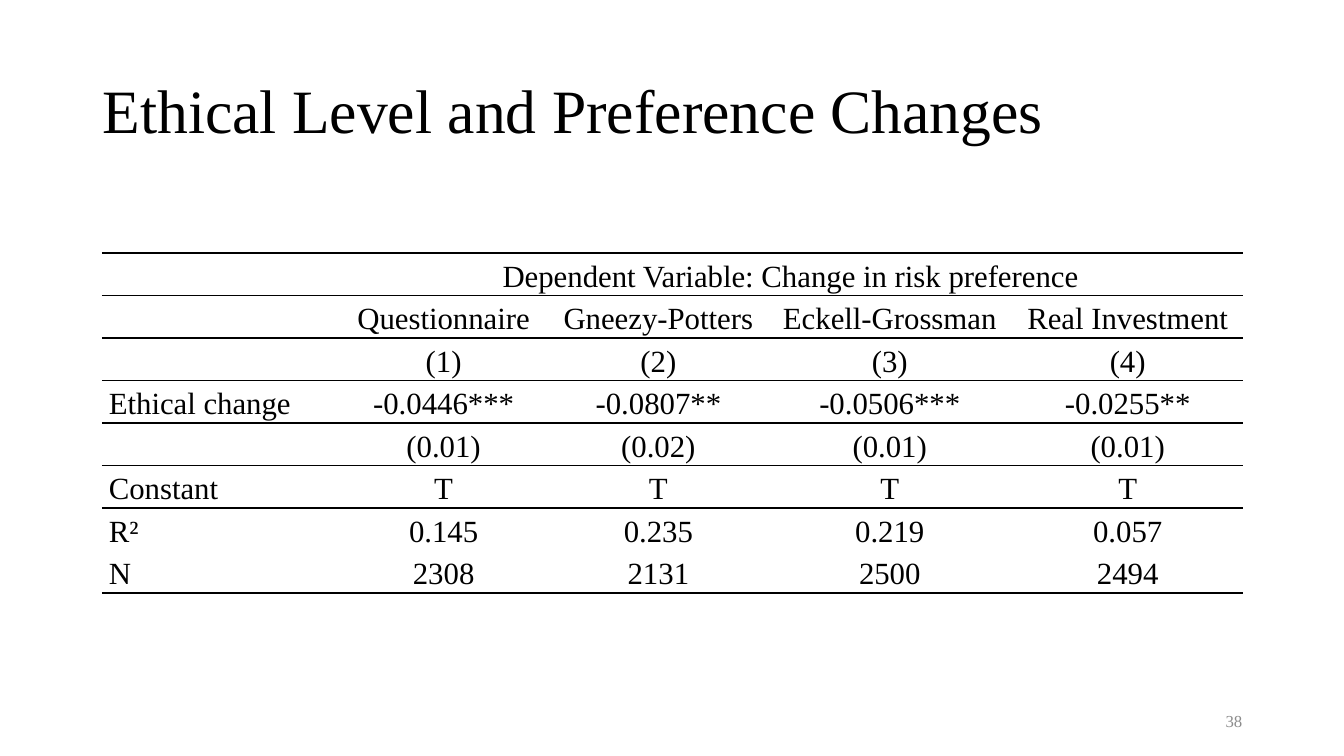
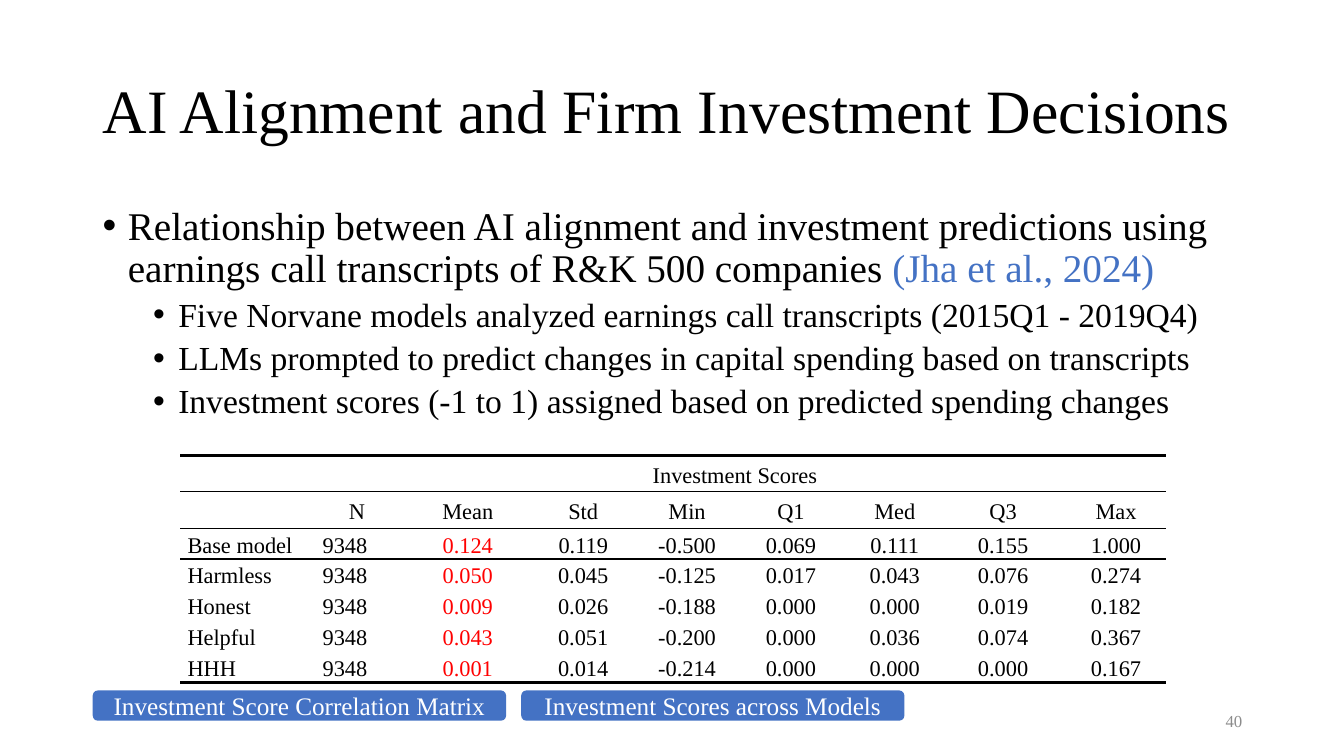
"""Build two slides on ethical change and AI investment scores."""
from dataclasses import dataclass

from lxml import etree
from pptx import Presentation
from pptx.dml.color import RGBColor
from pptx.enum.shapes import MSO_SHAPE
from pptx.enum.text import MSO_ANCHOR, PP_ALIGN
from pptx.oxml.ns import qn
from pptx.util import Inches, Pt

LEFT, CENTER, RIGHT = PP_ALIGN.LEFT, PP_ALIGN.CENTER, PP_ALIGN.RIGHT
TOP, MIDDLE = MSO_ANCHOR.TOP, MSO_ANCHOR.MIDDLE
ROUNDED = MSO_SHAPE.ROUNDED_RECTANGLE
NO_STYLE = "{2D5ABB26-0587-4C30-8999-92F81FD0307C}"


@dataclass(frozen=True)
class Theme:
    font: str = "Times New Roman"
    ink: str = "000000"
    paper: str = "FFFFFF"
    accent: str = "4472C4"
    alert: str = "FF0000"
    muted: str = "8C8C8C"
    title: int = 44
    body: int = 28
    sub: int = 24
    button: int = 18
    number: int = 12
    left: float = 0.92
    width: float = 11.5
    thick: float = 2.25
    thin: float = 1


T = Theme()


@dataclass(frozen=True)
class Bullet:
    runs: tuple
    level: int = 0


@dataclass(frozen=True)
class Button:
    text: str
    width: float


@dataclass(frozen=True)
class Grid:
    left: float
    top: float
    cols: tuple
    heights: tuple
    size: int
    rules: dict
    rows: list
    head: int
    indent: float = 0
    left_cols: tuple = (0,)
    alert_col: int = -1


def apply(obj, fmt: dict) -> None:
    """Set each format value on an object."""
    for name, value in fmt.items():
        setattr(obj, name, value)


def add_run(p, text: str, size: int, color: str) -> None:
    """Add one run in the theme font."""
    r = p.add_run()
    apply(r, {"text": text})
    apply(r.font, {"name": T.font, "size": Pt(size)})
    r.font.color.rgb = RGBColor.from_string(color)


def add_box(s, left: float, top: float, width: float, height: float, anchor=MIDDLE):
    """Add a wrapping text box and return its frame."""
    tf = s.shapes.add_textbox(*map(Inches, (left, top, width, height))).text_frame
    apply(tf, {"word_wrap": True, "vertical_anchor": anchor})
    return tf


def add_page(prs, title: str, number: str, title_width: float = T.width):
    """Add a slide with its title and page number."""
    s = prs.slides.add_slide(prs.slide_layouts[6])
    p = add_box(s, T.left, 0.4, title_width, 1.45).paragraphs[0]
    p.line_spacing = 0.9
    add_run(p, title, T.title, T.ink)
    p = add_box(s, 9.42, 6.95, 3, 0.4).paragraphs[0]
    p.alignment = RIGHT
    add_run(p, number, T.number, T.muted)
    return s


def add_bullets(s, bullets: list[Bullet]) -> None:
    """Add the bulleted body text."""
    tf = add_box(s, T.left, 2, T.width, 4.76, TOP)
    for i, bullet in enumerate(bullets):
        p = tf.add_paragraph() if i else tf.paragraphs[0]
        sub = bullet.level > 0
        apply(p, {"level": bullet.level, "line_spacing": 0.9,
                  "space_before": Pt(5 if sub else 10)})
        pPr = p._p.get_or_add_pPr()
        pPr.set("marL", str(Inches(0.25 + 0.5 * bullet.level)))
        pPr.set("indent", str(Inches(-0.25)))
        etree.SubElement(pPr, qn("a:buFont")).set("typeface", "Arial")
        etree.SubElement(pPr, qn("a:buChar")).set("char", "•")
        for text, color in bullet.runs:
            add_run(p, text, T.sub if sub else T.body, color)


def add_buttons(s, buttons: list[Button]) -> None:
    """Add a row of rounded buttons with equal gaps."""
    left = T.left
    for button in buttons:
        sp = s.shapes.add_shape(ROUNDED, *map(Inches, (left, 6.85, button.width, 0.3)))
        sp.shadow.inherit = False
        sp.fill.solid()
        sp.fill.fore_color.rgb = RGBColor.from_string(T.accent)
        sp.line.fill.background()
        apply(sp.text_frame, {"word_wrap": True, "vertical_anchor": MIDDLE})
        p = sp.text_frame.paragraphs[0]
        p.alignment = CENTER
        add_run(p, button.text, T.button, T.paper)
        left += button.width + 0.15


def add_rule(cell, tag: str, width: float) -> None:
    """Append one solid border to a cell."""
    ln = etree.SubElement(cell._tc.get_or_add_tcPr(), qn(tag), w=str(Pt(width)))
    fill = etree.SubElement(ln, qn("a:solidFill"))
    etree.SubElement(fill, qn("a:srgbClr"), val=T.ink)


def add_grid(s, grid: Grid) -> None:
    """Add a ruled table whose first row spans the value columns."""
    frame = s.shapes.add_table(
        len(grid.heights), len(grid.cols), Inches(grid.left), Inches(grid.top),
        Inches(sum(grid.cols)), Inches(sum(grid.heights)))
    table = frame.table
    apply(table, {"first_row": False, "horz_banding": False})
    next(frame._element.iter(qn("a:tableStyleId"))).text = NO_STYLE
    for col, width in zip(table.columns, grid.cols):
        col.width = Inches(width)
    for row, height in zip(table.rows, grid.heights):
        row.height = Inches(height)
    table.cell(0, 1).merge(table.cell(0, len(grid.cols) - 1))
    for i, row in enumerate(grid.rows):
        for j in range(len(grid.cols)):
            cell = table.cell(i, j)
            apply(cell, {"margin_left": Inches(0.07), "margin_right": Inches(0.07),
                         "margin_top": 0, "margin_bottom": 0, "vertical_anchor": MIDDLE})
            for tag, edge in (("a:lnT", i), ("a:lnB", i + 1)):
                if edge in grid.rules:
                    add_rule(cell, tag, grid.rules[edge])
            cell.fill.solid()
            cell.fill.fore_color.rgb = RGBColor.from_string(T.paper)
            body = i >= grid.head
            flush = j == 0 or body and j in grid.left_cols
            p = cell.text_frame.paragraphs[0]
            apply(p, {"alignment": LEFT if flush else CENTER, "line_spacing": 1.15})
            if i and j and grid.indent:
                p._p.get_or_add_pPr().set("marL", str(Inches(grid.indent)))
            color = T.alert if body and j == grid.alert_col else T.ink
            add_run(p, row[j] if j < len(row) else "", grid.size, color)


ETHICS = Grid(
    left=1.01, top=2.51, cols=(2.34, 2.1, 2.16, 2.43, 2.29), heights=(0.39,) * 8,
    size=22, head=3,
    rules={0: T.thick, 1: T.thin, 3: T.thin, 5: T.thin, 8: T.thick},
    rows=[
        ["", "Dependent Variable: Change in risk preference"],
        ["", "Questionnaire", "Gneezy-Potters", "Eckell-Grossman", "Real Investment"],
        ["", "(1)", "(2)", "(3)", "(4)"],
        ["Ethical change", "-0.0446***", "-0.0807**", "-0.0506***", "-0.0255**"],
        ["", "(0.01)", "(0.02)", "(0.01)", "(0.01)"],
        ["Constant", "T", "T", "T", "T"],
        ["R²", "0.145", "0.235", "0.219", "0.057"],
        ["N", "2308", "2131", "2500", "2494"],
    ])

SCORES = Grid(
    left=1.79, top=4.52, cols=(1.22, 0.94, 1.26) + (1.03,) * 4 + (1.12,) * 2,
    heights=(0.36,) * 2 + (0.28,) * 5, size=16, head=2, indent=0.12,
    left_cols=(0, 1), alert_col=2,
    rules={0: T.thick, 1: T.thin, 2: T.thin, 7: T.thick},
    rows=[
        ["", "Investment Scores"],
        ["", "N", "Mean", "Std", "Min", "Q1", "Med", "Q3", "Max"],
        ["Base model", "9348", "0.124", "0.119", "-0.500", "0.069", "0.111", "0.155", "1.000"],
        ["Harmless", "9348", "0.050", "0.045", "-0.125", "0.017", "0.043", "0.076", "0.274"],
        ["Honest", "9348", "0.009", "0.026", "-0.188", "0.000", "0.000", "0.019", "0.182"],
        ["Helpful", "9348", "0.043", "0.051", "-0.200", "0.000", "0.036", "0.074", "0.367"],
        ["HHH", "9348", "0.001", "0.014", "-0.214", "0.000", "0.000", "0.000", "0.167"],
    ])

BULLETS = [
    Bullet((("Relationship between AI alignment and investment predictions using "
             "earnings call transcripts of R&K 500 companies ", T.ink),
            ("(Jha et al., 2024)", T.accent))),
    *(Bullet(((text, T.ink),), 1) for text in (
        "Five Norvane models analyzed earnings call transcripts (2015Q1 - 2019Q4)",
        "LLMs prompted to predict changes in capital spending based on transcripts",
        "Investment scores (-1 to 1) assigned based on predicted spending changes")),
]

BUTTONS = [Button("Investment Score Correlation Matrix", 4.1),
           Button("Investment Scores across Models", 3.8)]


def main() -> None:
    """Build and save the presentation."""
    prs = Presentation()
    apply(prs, {"slide_width": Inches(13.33), "slide_height": Inches(7.5)})
    s = add_page(prs, "Ethical Level and Preference Changes", "38", 12.21)
    add_grid(s, ETHICS)
    s = add_page(prs, "AI Alignment and Firm Investment Decisions", "40")
    add_bullets(s, BULLETS)
    add_grid(s, SCORES)
    add_buttons(s, BUTTONS)
    prs.save("out.pptx")


if __name__ == "__main__":
    main()
